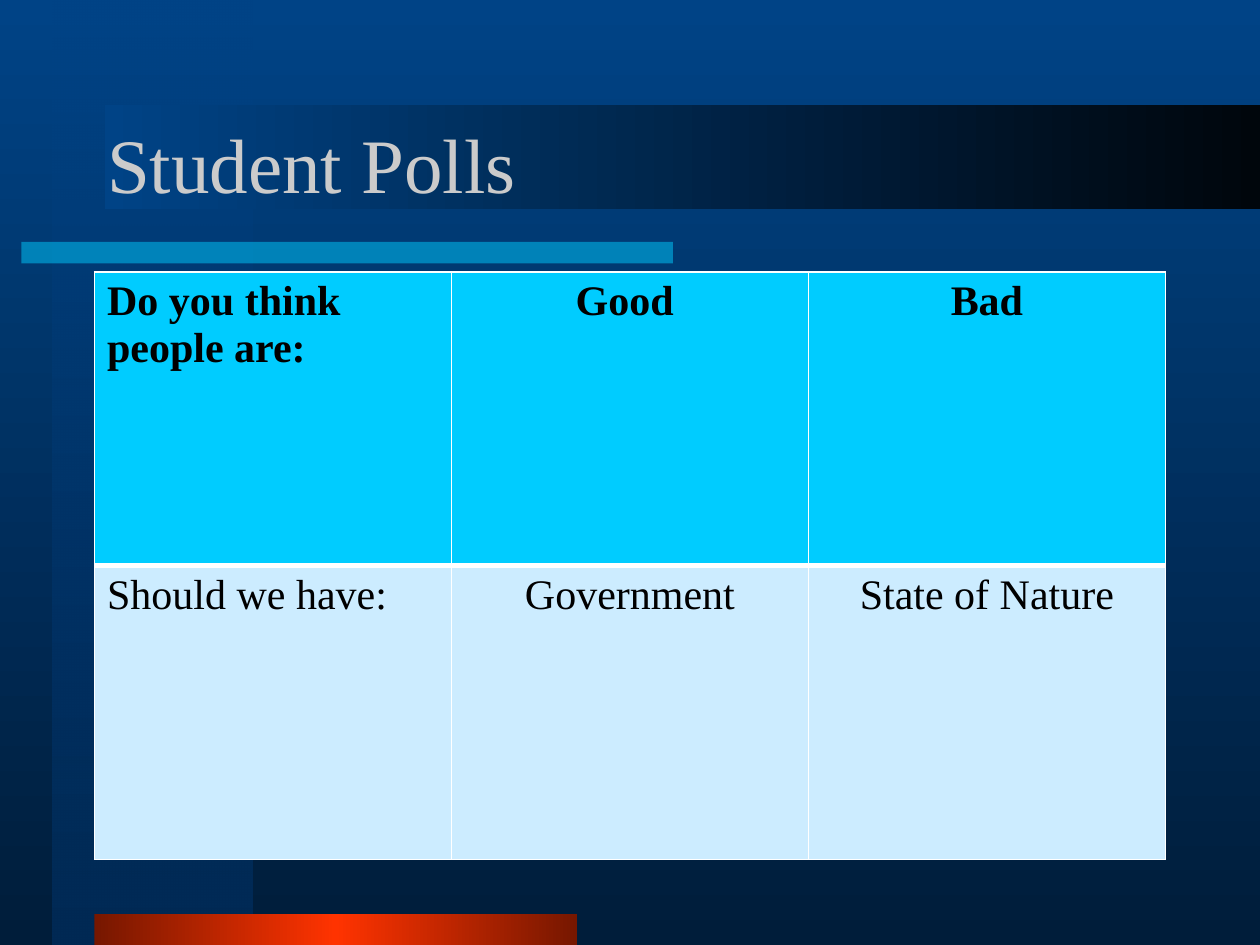
import pptx
import pptx.util
import pptx.oxml
import pptx.oxml.ns
import pptx.dml.color
import pptx.enum.shapes
import pptx.enum.text
from lxml import etree

Inches, Pt = pptx.util.Inches, pptx.util.Pt
RGB = pptx.dml.color.RGBColor.from_string
PP_ALIGN = pptx.enum.text.PP_ALIGN
qn = pptx.oxml.ns.qn

COLORS = {
    "blue": "004386", "navy": "001D3A", "panel": "002A55", "night": "00060C",
    "cyan": "00CCFF", "pale": "CCECFF", "red": "FF3300", "brick": "761700",
    "title": "CBCBCB", "text": "000000", "border": "FFFFFF",
}
FONT = "Times New Roman"
TITLE = "Student Polls"
TITLE_BOX = (0.75, 0.67, 8.5, 1.25)
BACKGROUND = [(0, "blue", 100), (100, "navy", 100)]
BARS = [
    {"box": (0.42, 0, 1.58, 7.5), "angle": 270,
     "stops": [(0, "blue", 50), (100, "panel", 100)]},
    {"box": (0.17, 1.92, 5.17, 0.17), "angle": 0,
     "stops": [(0, "cyan", 50), (100, "cyan", 50)]},
    {"box": (0.75, 7.25, 3.83, 0.25), "angle": 0,
     "stops": [(0, "brick", 100), (50, "red", 100), (100, "brick", 100)]},
    {"box": (0.83, 0.83, 9.17, 0.83), "angle": 0,
     "stops": [(0, "blue", 100), (100, "night", 100)]},
]
TABLE_BOX = (0.75, 2.16, 8.5, 4.66)
ROWS = [
    {"texts": ["Do you think people are:", "Good ", "Bad"],
     "fill": "cyan", "bold": True, "top": 1, "bottom": 3},
    {"texts": ["Should we have:", "Government", "State of Nature"],
     "fill": "pale", "bold": False, "top": 3, "bottom": 1},
]


def inches(box):
    return [Inches(v) for v in box]


def set_gradient(fill, owner, stops, angle):
    fill.gradient()
    fill.gradient_angle = angle
    gs_list = next(owner.iter(qn("a:gsLst")))
    for gs in list(gs_list):
        gs_list.remove(gs)
    for pos, color, opacity in stops:
        gs = etree.SubElement(gs_list, qn("a:gs"), pos=str(pos * 1000))
        clr = etree.SubElement(gs, qn("a:srgbClr"), val=COLORS[color])
        if opacity < 100:
            etree.SubElement(clr, qn("a:alpha"), val=str(opacity * 1000))


def set_text(tf, text, align, color, **formats):
    p = tf.paragraphs[0]
    p.alignment = align
    r = p.add_run()
    r.text = text
    r.font.color.rgb = RGB(COLORS[color])
    for name, value in {"name": FONT, **formats}.items():
        setattr(r.font, name, value)


def set_borders(cell, widths):
    tc_pr = cell._tc.get_or_add_tcPr()
    for i, (side, width) in enumerate(widths.items()):
        ln = etree.Element(qn(f"a:ln{side}"), w=str(Pt(width)))
        fill = etree.SubElement(ln, qn("a:solidFill"))
        etree.SubElement(fill, qn("a:srgbClr"), val=COLORS["border"])
        tc_pr.insert(i, ln)


def add_bar(s, bar):
    sp = s.shapes.add_shape(pptx.enum.shapes.MSO_SHAPE.RECTANGLE, *inches(bar["box"]))
    sp.shadow.inherit = False
    sp.line.fill.background()
    if len({stop[1:] for stop in bar["stops"]}) == 1:
        _, color, opacity = bar["stops"][0]
        sp.fill.solid()
        sp.fill.fore_color.rgb = RGB(COLORS[color])
        clr = next(sp._element.spPr.iter(qn("a:srgbClr")))
        etree.SubElement(clr, qn("a:alpha"), val=str(opacity * 1000))
    else:
        set_gradient(sp.fill, sp._element, bar["stops"], bar["angle"])


def add_title(s):
    sp = s.shapes.title
    s.shapes._spTree.append(sp._element)
    sp.left, sp.top, sp.width, sp.height = inches(TITLE_BOX)
    sp.text_frame.vertical_anchor = pptx.enum.text.MSO_ANCHOR.MIDDLE
    set_text(sp.text_frame, TITLE, PP_ALIGN.LEFT, "title", size=Pt(44))


def add_poll_table(s):
    columns = len(ROWS[0]["texts"])
    table = s.shapes.add_table(len(ROWS), columns, *inches(TABLE_BOX)).table
    table.first_row = table.horz_banding = False
    for i, row in enumerate(ROWS):
        for j, text in enumerate(row["texts"]):
            cell = table.cell(i, j)
            cell.fill.solid()
            cell.fill.fore_color.rgb = RGB(COLORS[row["fill"]])
            set_borders(cell, {"L": 1, "R": 1, "T": row["top"], "B": row["bottom"]})
            align = PP_ALIGN.CENTER if j else PP_ALIGN.LEFT
            set_text(cell.text_frame, text, align, "text", size=Pt(24), bold=row["bold"])


def main():
    prs = pptx.Presentation()
    prs.slide_width, prs.slide_height = Inches(10), Inches(7.5)
    s = prs.slides.add_slide(prs.slide_layouts[5])
    set_gradient(s.background.fill, s._element, BACKGROUND, 270)
    for bar in BARS:
        add_bar(s, bar)
    add_title(s)
    add_poll_table(s)
    prs.save("out.pptx")


if __name__ == "__main__":
    main()
